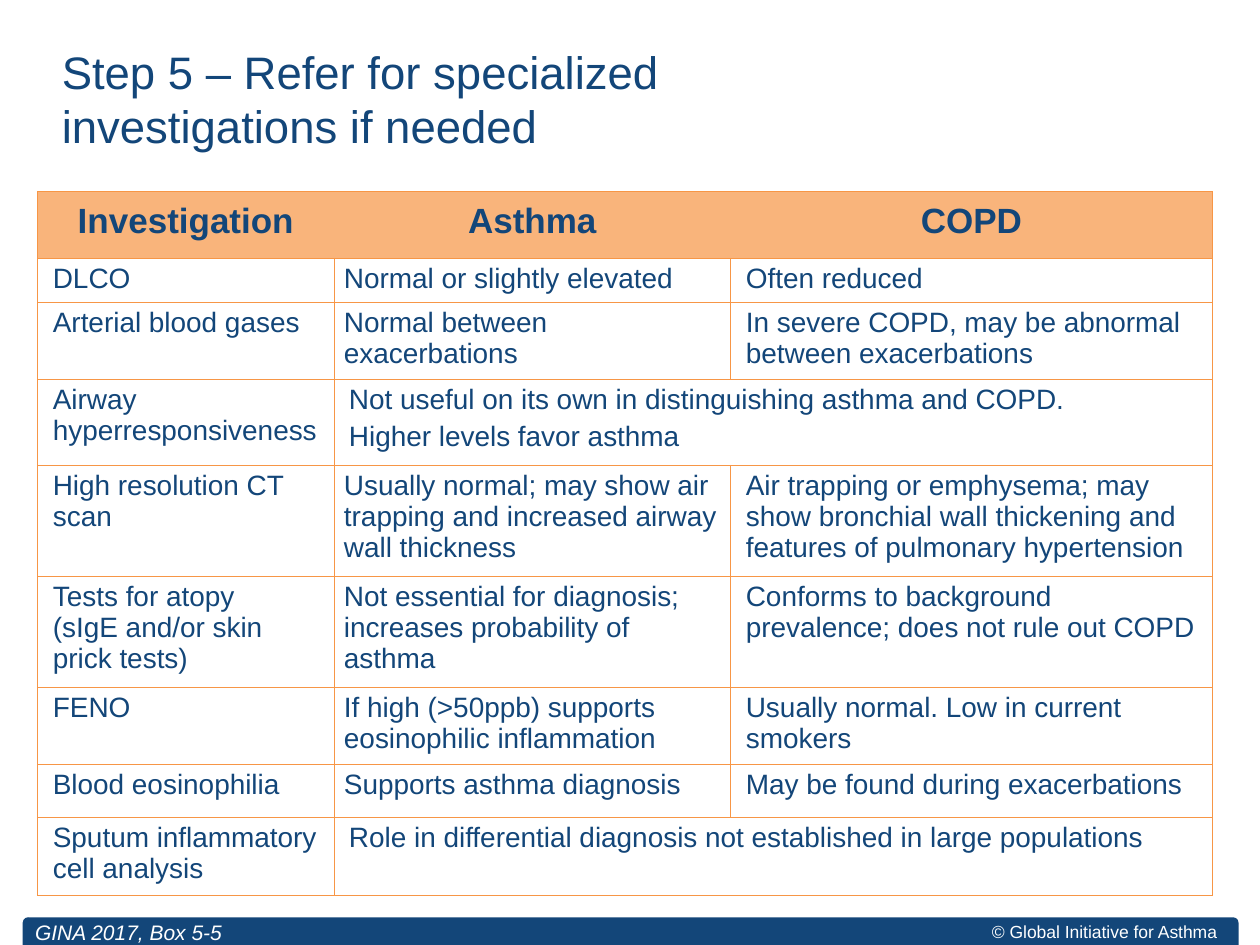
from lxml import etree
from pptx import Presentation
from pptx.dml.color import RGBColor
from pptx.enum.shapes import MSO_SHAPE
from pptx.enum.text import MSO_ANCHOR, PP_ALIGN
from pptx.oxml.ns import qn
from pptx.util import Inches, Pt

NAVY = RGBColor(0x13, 0x46, 0x79)
ORANGE = RGBColor(0xF7, 0x96, 0x46)
PEACH = RGBColor(0xF9, 0xB4, 0x7B)
WHITE = RGBColor(0xFF, 0xFF, 0xFF)
CENTER, LEFT = PP_ALIGN.CENTER, PP_ALIGN.LEFT
TOP, MIDDLE = MSO_ANCHOR.TOP, MSO_ANCHOR.MIDDLE
BAR = MSO_SHAPE.ROUND_2_SAME_RECTANGLE

COLS = [2.35, 3.15, 3.82]
ROWS = [0.53, 0.35, 0.61, 0.68, 0.88, 0.88, 0.61, 0.42, 0.62]
HEAD = {"size": Pt(20), "bold": True}
BODY = {"size": Pt(16), "bold": False}
DATA = [
    ["Investigation", "Asthma", "COPD"],
    ["DLCO", "Normal or slightly elevated", "Often reduced"],
    ["Arterial blood gases", "Normal between exacerbations",
     "In severe COPD, may be abnormal between exacerbations"],
    ["Airway hyperresponsiveness",
     "Not useful on its own in distinguishing asthma and COPD.\n"
     "Higher levels favor asthma"],
    ["High resolution CT scan",
     "Usually normal; may show air trapping and increased airway wall thickness",
     "Air trapping or emphysema; may show bronchial wall thickening "
     "and features of pulmonary hypertension"],
    ["Tests for atopy \v(sIgE and/or skin prick tests)",
     "Not essential for diagnosis; increases probability of asthma",
     "Conforms to background prevalence; does not rule out COPD"],
    ["FENO", "If high (>50ppb) supports eosinophilic inflammation",
     "Usually normal. Low in current smokers"],
    ["Blood eosinophilia", "Supports asthma diagnosis",
     "May be found during exacerbations"],
    ["Sputum inflammatory cell analysis",
     "Role in differential diagnosis not established in large populations"],
]


def write(tf, text, font, color=NAVY, align=LEFT):
    """Fill a text frame, one paragraph per line of text."""
    tf.text = text
    for i, p in enumerate(tf.paragraphs):
        p.alignment = align
        if i:
            p.space_before = Pt(3)
        for r in p.runs:
            r.font.name = "Arial"
            r.font.color.rgb = color
            for key, value in font.items():
                setattr(r.font, key, value)


def set_margins(target, left, top, right, bottom):
    """Set the four insets of a cell or text frame in inches."""
    sides = {"left": left, "top": top, "right": right, "bottom": bottom}
    for side, value in sides.items():
        setattr(target, f"margin_{side}", Inches(value))


def set_borders(cell, hidden):
    """Draw thin orange cell borders, leaving out the hidden sides."""
    tc_pr = cell._tc.get_or_add_tcPr()
    for i, side in enumerate("LRTB"):
        ln = etree.Element(qn(f"a:ln{side}"), w=str(Pt(0.5)))
        if side in hidden:
            etree.SubElement(ln, qn("a:noFill"))
        else:
            fill = etree.SubElement(ln, qn("a:solidFill"))
            etree.SubElement(fill, qn("a:srgbClr"), val=str(ORANGE))
        tc_pr.insert(i, ln)


def add_label(s, box, text, font, color, align=LEFT, margins=(0, 0, 0, 0), wrap=True):
    """Add a vertically centred text box."""
    tf = s.shapes.add_textbox(*map(Inches, box)).text_frame
    tf.word_wrap = wrap
    tf.vertical_anchor = MIDDLE
    set_margins(tf, *margins)
    write(tf, text, font, color, align)


def add_footer_bar(s):
    """Add the navy strip with rounded top corners."""
    sp = s.shapes.add_shape(BAR, *map(Inches, (0.18, 7.28, 9.65, 0.22)))
    sp.adjustments[0] = 0.2
    sp.shadow.inherit = False
    sp.fill.solid()
    sp.fill.fore_color.rgb = NAVY
    sp.line.fill.background()


def add_investigations(s):
    """Add the comparison table; a short row spans its last two columns."""
    box = map(Inches, (0.3, 1.52, sum(COLS), sum(ROWS)))
    table = s.shapes.add_table(len(ROWS), len(COLS), *box).table
    for col, width in zip(table.columns, COLS):
        col.width = Inches(width)
    for row, height in zip(table.rows, ROWS):
        row.height = Inches(height)
    for i, texts in enumerate(DATA):
        spanned = len(texts) < len(COLS)
        if spanned:
            table.cell(i, 1).merge(table.cell(i, 2))
        for j in range(len(COLS)):
            cell = table.cell(i, j)
            cell.fill.solid()
            cell.fill.fore_color.rgb = WHITE if i else PEACH
            set_borders(cell, "" if i else ("R", "LR", "L")[j])
            if j >= len(texts):
                continue
            cell.vertical_anchor = TOP
            if i:
                left = 0.08 if j == 1 and not spanned else 0.12
                set_margins(cell, left, 0.04, 0.08, 0.04)
                write(cell.text_frame, texts[j], BODY)
            else:
                set_margins(cell, 0.1, 0.08, 0.1, 0.08)
                write(cell.text_frame, texts[j], HEAD, align=CENTER)


def main():
    """Build and save the slide."""
    prs = Presentation()
    prs.slide_width, prs.slide_height = Inches(10), Inches(7.5)
    s = prs.slides.add_slide(prs.slide_layouts[6])
    add_footer_bar(s)
    add_label(s, (7.82, 7.27, 1.89, 0.24), "© Global Initiative for Asthma",
              {"size": Pt(10)}, WHITE, CENTER, wrap=False)
    add_investigations(s)
    add_label(s, (0.19, 0.27, 7.09, 1.02),
              "Step 5 – Refer for specialized investigations if needed",
              {"size": Pt(26)}, NAVY, margins=(0.3, 0.05, 0.1, 0.05))
    add_label(s, (0.18, 7.3, 2, 0.2), "GINA 2017, Box 5-5",
              {"size": Pt(12), "italic": True}, WHITE, margins=(0.1, 0, 0.1, 0))
    prs.save("out.pptx")


if __name__ == "__main__":
    main()
